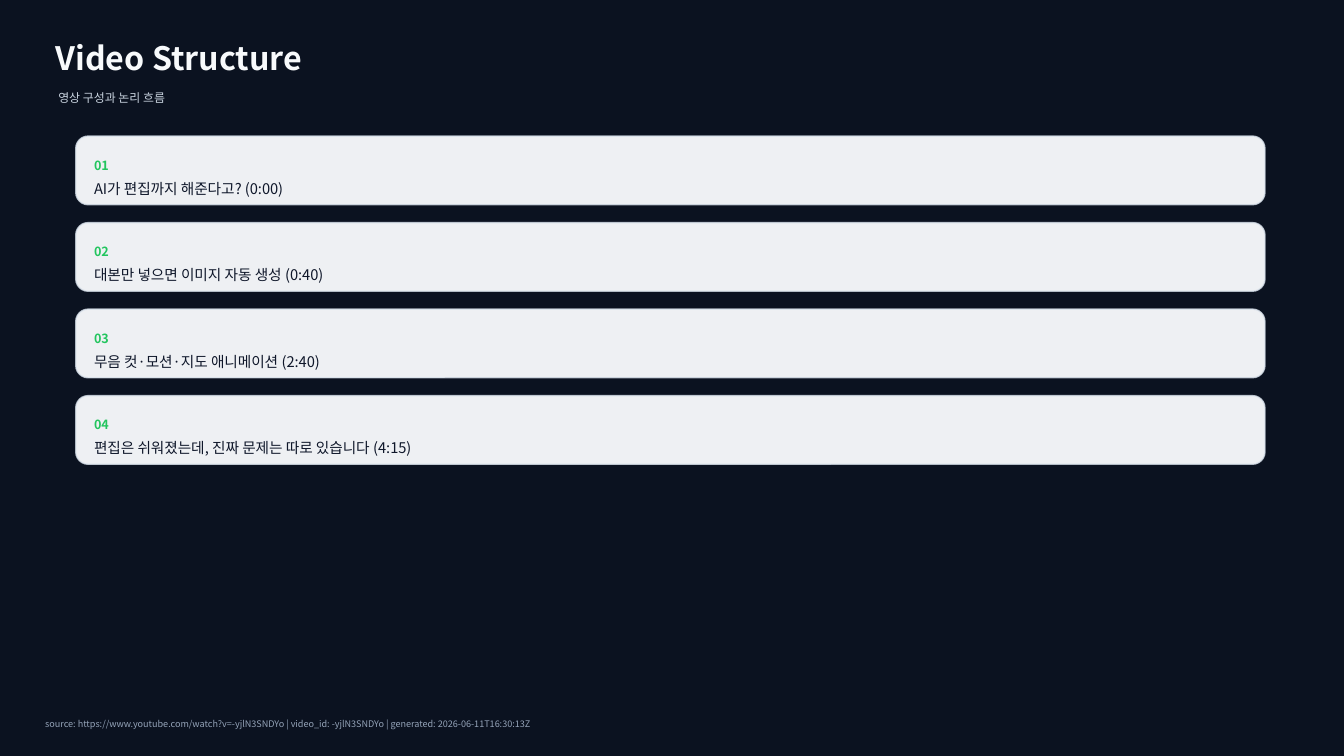
from lxml.etree import SubElement
from pptx import Presentation
from pptx.dml.color import RGBColor
from pptx.enum.shapes import MSO_SHAPE
from pptx.enum.text import MSO_ANCHOR
from pptx.oxml.ns import qn
from pptx.util import Cm, Pt

TITLE = "Video Structure"
SUBTITLE = "영상 구성과 논리 흐름"
SECTIONS = [
    "AI가 편집까지 해준다고? (0:00)",
    "대본만 넣으면 이미지 자동 생성 (0:40)",
    "무음 컷·모션·지도 애니메이션 (2:40)",
    "편집은 쉬워졌는데, 진짜 문제는 따로 있습니다 (4:15)",
]
SOURCE = ("source: https://www.youtube.com/watch?v=-yjlN3SNDYo | "
          "video_id: -yjlN3SNDYo | generated: 2026-06-11T16:30:13Z")
FONT = "Noto Sans CJK KR"
COLORS = {
    "bg": "0B1220", "title": "F8FAFC", "subtitle": "CBD5E1",
    "card": "F8FAFC", "border": "D7E0EA", "number": "22C55E",
    "body": "0F172A", "source": "94A3B8",
}
CARD_X, CARD_Y, CARD_W, CARD_H = 1.91, 3.43, 29.97, 1.73
CARD_STEP = 2.18
PAD = 0.46


def rgb(name):
    return RGBColor.from_string(COLORS[name])


def add_text(s, x, y, w, h, text, size, color, bold=False):
    tf = s.shapes.add_textbox(Cm(x), Cm(y), Cm(w), Cm(h)).text_frame
    tf.word_wrap = True
    tf.vertical_anchor = MSO_ANCHOR.MIDDLE
    tf.margin_left = tf.margin_right = tf.margin_top = tf.margin_bottom = 0
    r = tf.paragraphs[0].add_run()
    r.text = text
    r.font.size = Pt(size)
    r.font.bold = bold
    r.font.color.rgb = rgb(color)
    r.font.name = FONT
    SubElement(r.font._element, qn("a:ea"), typeface=FONT)


def set_color(fill, name, opacity):
    fill.solid()
    fill.fore_color.rgb = rgb(name)
    clr = fill._xPr.find(qn("a:solidFill"))[0]
    SubElement(clr, qn("a:alpha"), val=str(opacity * 1000))


def add_card(s, y):
    sp = s.shapes.add_shape(MSO_SHAPE.ROUNDED_RECTANGLE,
                            Cm(CARD_X), Cm(y), Cm(CARD_W), Cm(CARD_H))
    sp.adjustments[0] = 0.18
    sp.shadow.inherit = False
    set_color(sp.fill, "card", 96)
    set_color(sp.line.fill, "border", 80)
    sp.line.width = Pt(1)


def main():
    """Build the video structure slide."""
    prs = Presentation()
    prs.slide_width, prs.slide_height = Cm(33.87), Cm(19.05)
    s = prs.slides.add_slide(prs.slide_layouts[6])
    s.background.fill.solid()
    s.background.fill.fore_color.rgb = rgb("bg")

    add_text(s, 1.4, 0.89, 30.48, 1.14, TITLE, 23, "title", True)
    add_text(s, 1.47, 2.11, 29.21, 0.71, SUBTITLE, 8.5, "subtitle")
    text_x, text_w = CARD_X + PAD, CARD_W - 2 * PAD
    for i, section in enumerate(SECTIONS):
        y = CARD_Y + i * CARD_STEP
        add_card(s, y)
        add_text(s, text_x, y + 0.41, text_w, 0.64, f"{i + 1:02d}", 9, "number", True)
        add_text(s, text_x, y + 1.27, text_w, 0.1, section, 10.5, "body")
    add_text(s, 1.14, 17.91, 31.5, 0.64, SOURCE, 6.5, "source")
    prs.save("out.pptx")


if __name__ == "__main__":
    main()
